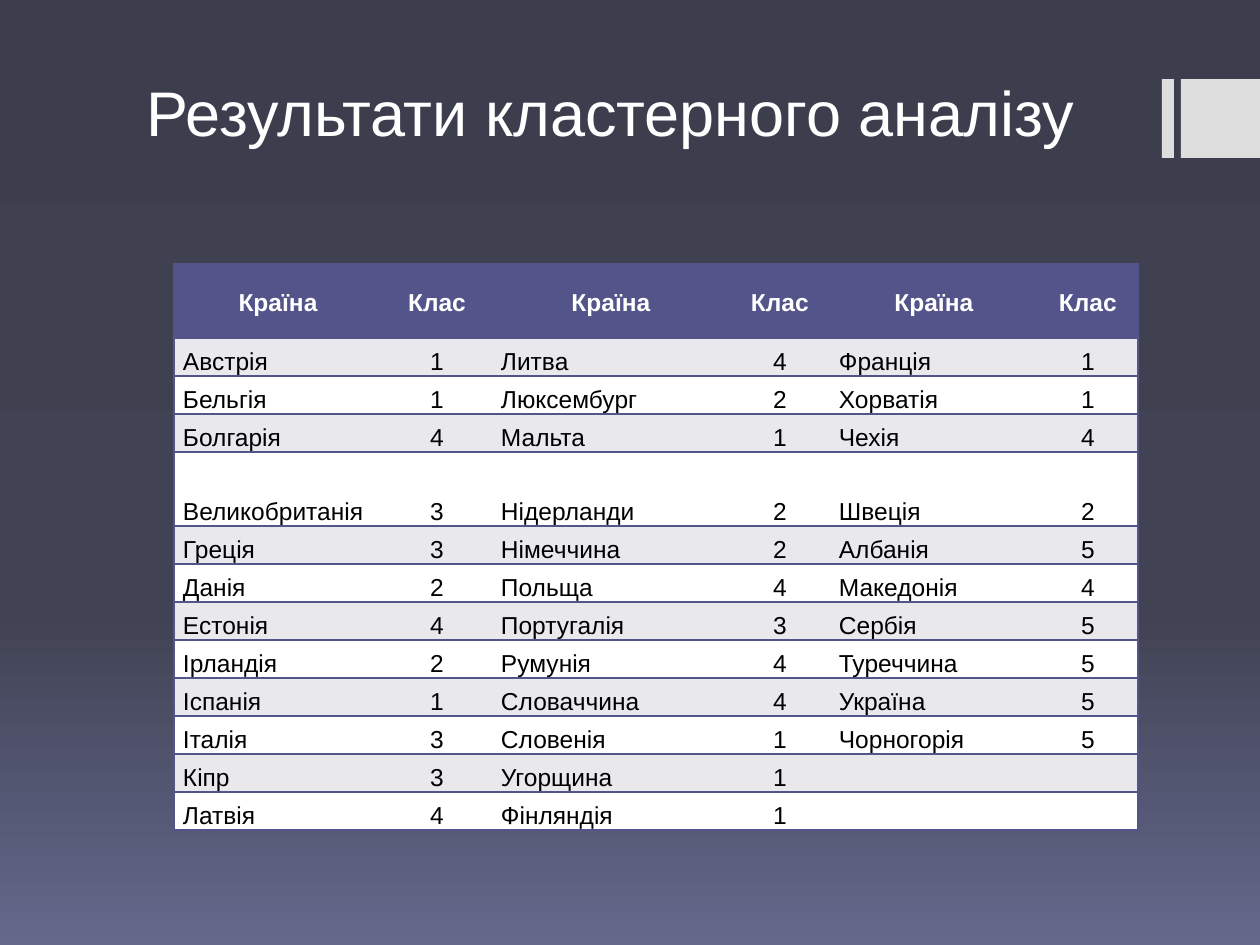
from copy import deepcopy

from lxml.etree import SubElement
from pptx import Presentation
from pptx.dml.color import RGBColor
from pptx.enum.shapes import MSO_SHAPE as Shape
from pptx.enum.text import MSO_ANCHOR as Anchor, PP_ALIGN as Align
from pptx.oxml.ns import qn
from pptx.util import Emu, Pt

COLORS = {
    "top": "3C3E4E", "middle": "414354", "bottom": "64688B",
    "tab": "DEDEDE", "header": "53548A", "band": "E9E9ED",
    "white": "FFFFFF", "black": "000000",
}
FONT = "Arial"
NO_GRID_STYLE = "{2D5ABB26-0587-4C30-8999-92F81FD0307C}"
COLUMN_WIDTHS = [208, 110, 238, 100, 208, 100]
ROW_HEIGHT, TALL_ROW_HEIGHT = 38, 74
TALL_ROWS = (0, 4)
HEADER = ["Країна", "Клас"] * 3
COUNTRIES = [
    ("Австрія", "1", "Литва", "4", "Франція", "1"),
    ("Бельгія", "1", "Люксембург", "2", "Хорватія", "1"),
    ("Болгарія", "4", "Мальта", "1", "Чехія", "4"),
    ("Великобританія", "3", "Нідерланди", "2", "Швеція", "2"),
    ("Греція", "3", "Німеччина", "2", "Албанія", "5"),
    ("Данія", "2", "Польща", "4", "Македонія", "4"),
    ("Естонія", "4", "Португалія", "3", "Сербія", "5"),
    ("Ірландія", "2", "Румунія", "4", "Туреччина", "5"),
    ("Іспанія", "1", "Словаччина", "4", "Україна", "5"),
    ("Італія", "3", "Словенія", "1", "Чорногорія", "5"),
    ("Кіпр", "3", "Угорщина", "1", "", ""),
    ("Латвія", "4", "Фінляндія", "1", "", ""),
]


def px(length):
    """Turn pixels into EMU."""
    return Emu(round(length * 914400 / 126))


def rgb(name):
    """Look up a named colour."""
    return RGBColor.from_string(COLORS[name])


def style_text(paragraph, size, color, bold=False):
    """Set the font of a paragraph."""
    font = paragraph.font
    font.name, font.size, font.bold = FONT, Pt(size), bold
    font.color.rgb = rgb(color)


def paint_background(slide):
    """Fill the slide with a vertical gradient of three stops."""
    fill = slide.background.fill
    fill.gradient()
    fill.gradient_angle = 270
    first_stop = slide.element.find(".//" + qn("a:gs"))
    first_stop.addnext(deepcopy(first_stop))
    stops = [("top", 0), ("middle", 0.65), ("bottom", 1)]
    for stop, (color, position) in zip(fill.gradient_stops, stops):
        stop.color.rgb = rgb(color)
        stop.position = position


def add_tab(slide, left, width):
    """Add one block of the tab at the right edge."""
    tab = slide.shapes.add_shape(Shape.RECTANGLE, px(left), px(79), px(width), px(79))
    tab.shadow.inherit = False
    tab.fill.solid()
    tab.fill.fore_color.rgb = rgb("tab")
    tab.line.fill.background()


def add_title(slide, text):
    """Add the slide title."""
    frame = slide.shapes.add_textbox(px(134), px(76), px(1008), px(79)).text_frame
    frame.word_wrap = True
    frame.vertical_anchor = Anchor.BOTTOM
    title = frame.paragraphs[0]
    title.text = text
    style_text(title, 36, "white")


def add_borders(cell, sides):
    """Draw one-point lines on the given sides of a cell."""
    properties = cell._tc.get_or_add_tcPr()
    for side in sides:
        line = SubElement(properties, qn(f"a:ln{side}"), w=str(Pt(1)))
        solid = SubElement(line, qn("a:solidFill"))
        SubElement(solid, qn("a:srgbClr"), val=COLORS["header"])


def fill_cell(cell, text, row, column):
    """Write and style one cell by its place in the table."""
    is_header = row == 0
    outer_side = {0: "L", len(HEADER) - 1: "R"}.get(column, "")
    add_borders(cell, outer_side + "TB")
    cell.fill.solid()
    background = "header" if is_header else "band" if row % 2 else "white"
    cell.fill.fore_color.rgb = rgb(background)
    cell.margin_left = cell.margin_right = px(9)
    cell.margin_top = cell.margin_bottom = 0
    cell.vertical_anchor = Anchor.MIDDLE if is_header else Anchor.BOTTOM
    entry = cell.text_frame.paragraphs[0]
    entry.text = text
    entry.line_spacing = 1.15
    entry.alignment = Align.CENTER if is_header or column % 2 else Align.LEFT
    style_text(entry, 14, "white" if is_header else "black", is_header)


def add_country_table(slide):
    """Add the table of countries and their classes."""
    rows = [HEADER, *COUNTRIES]
    heights = [TALL_ROW_HEIGHT if row in TALL_ROWS else ROW_HEIGHT
               for row in range(len(rows))]
    table = slide.shapes.add_table(
        len(rows), len(HEADER), px(174), px(264),
        px(sum(COLUMN_WIDTHS)), px(sum(heights))).table
    table._tbl.tblPr.find(qn("a:tableStyleId")).text = NO_GRID_STYLE
    table.horz_banding = False
    for column, width in enumerate(COLUMN_WIDTHS):
        table.columns[column].width = px(width)
    for row, (entries, height) in enumerate(zip(rows, heights)):
        table.rows[row].height = px(height)
        for column, text in enumerate(entries):
            fill_cell(table.cell(row, column), text, row, column)


def main():
    """Build and save the slide."""
    deck = Presentation()
    deck.slide_width, deck.slide_height = px(1260), px(945)
    slide = deck.slides.add_slide(deck.slide_layouts[6])
    paint_background(slide)
    add_tab(slide, 1162, 12)
    add_tab(slide, 1181, 79)
    add_title(slide, "Результати кластерного аналізу")
    add_country_table(slide)
    deck.save("out.pptx")


if __name__ == "__main__":
    main()
